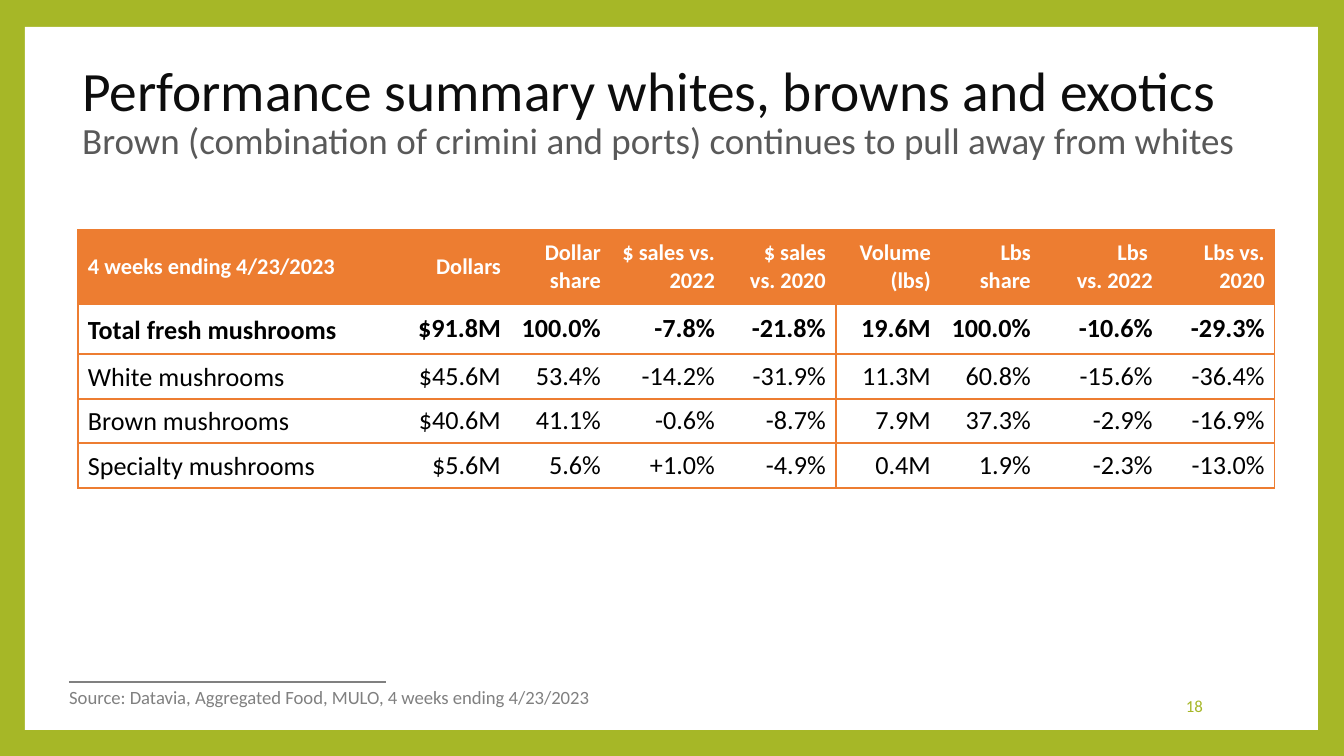
from dataclasses import dataclass

from lxml import etree
from pptx import Presentation
from pptx.dml.color import RGBColor
from pptx.enum.shapes import MSO_CONNECTOR, MSO_SHAPE
from pptx.enum.text import MSO_ANCHOR, PP_ALIGN
from pptx.oxml.ns import qn
from pptx.util import Emu, Pt

EMU_PER_PX = 914400 / 134.4
FONT = "Calibri"
LEFT, RIGHT = PP_ALIGN.LEFT, PP_ALIGN.RIGHT
TOP, MIDDLE = MSO_ANCHOR.TOP, MSO_ANCHOR.MIDDLE
RECTANGLE = MSO_SHAPE.RECTANGLE
STRAIGHT = MSO_CONNECTOR.STRAIGHT

GREEN = RGBColor(0xA6, 0xB7, 0x27)
ORANGE = RGBColor(0xED, 0x7D, 0x31)
WHITE = RGBColor(0xFF, 0xFF, 0xFF)
BLACK = RGBColor(0x00, 0x00, 0x00)
TITLE_COLOR = RGBColor(0x0D, 0x0D, 0x0D)
SUBTITLE_COLOR = RGBColor(0x59, 0x59, 0x59)
GRAY = RGBColor(0x80, 0x80, 0x80)

COLUMN_WIDTHS = (318, 115, 100, 114, 111, 105, 100, 122, 112)
ROW_HEIGHTS = (74, 50, 45, 44, 45)
GROUP_STARTS = (0, 5)
GROUP_ENDS = (4, 8)
CELL_INSET = 10

# "\n" starts a new paragraph, "\v" breaks a line inside one.
TABLE_ROWS = (
    ("4 weeks ending 4/23/2023", "Dollars", "Dollar share", "$ sales vs. 2022",
     "$ sales vs. 2020", "Volume (lbs)", "Lbs\nshare", "Lbs \vvs. 2022", "Lbs vs. 2020"),
    ("Total fresh mushrooms", "$91.8M", "100.0%", "-7.8%", "-21.8%",
     "19.6M", "100.0%", "-10.6%", "-29.3%"),
    ("White mushrooms", "$45.6M", "53.4%", "-14.2%", "-31.9%",
     "11.3M", "60.8%", "-15.6%", "-36.4%"),
    ("Brown mushrooms", "$40.6M", "41.1%", "-0.6%", "-8.7%",
     "7.9M", "37.3%", "-2.9%", "-16.9%"),
    ("Specialty mushrooms", "$5.6M", "5.6%", "+1.0%", "-4.9%",
     "0.4M", "1.9%", "-2.3%", "-13.0%"),
)


@dataclass(frozen=True)
class Style:
    size: float
    color: RGBColor
    bold: bool = False


@dataclass(frozen=True)
class Label:
    left: int
    top: int
    width: int
    height: int
    lines: tuple[tuple[str, Style], ...]
    align: PP_ALIGN = LEFT
    anchor: MSO_ANCHOR = MIDDLE
    line_spacing: float = 1.0
    wrap: bool = True


HEADER_STYLE = Style(12, WHITE, True)
TOTAL_STYLE = Style(14, BLACK, True)
BODY_STYLE = Style(14, BLACK)

LABELS = (
    Label(69, 60, 1259, 106, (
        ("Performance summary whites, browns and exotics", Style(29.7, TITLE_COLOR)),
        ("Brown (combination of crimini and ports) continues to pull away from whites",
         Style(19.8, SUBTITLE_COLOR)),
    ), line_spacing=0.9),
    Label(1028, 686, 188, 40, (("18", Style(9, GREEN)),), align=RIGHT),
    Label(56, 679, 555, 36, (
        ("Source: Datavia, Aggregated Food, MULO, 4 weeks ending 4/23/2023",
         Style(10, GRAY)),
    ), anchor=TOP, wrap=False),
)


def px(length: int) -> Emu:
    return Emu(round(length * EMU_PER_PX))


def add_run(paragraph, text: str, style: Style) -> None:
    run = paragraph.add_run()
    run.text = text
    run.font.name = FONT
    run.font.size = Pt(style.size)
    run.font.bold = style.bold
    run.font.color.rgb = style.color


def add_lines(paragraph, lines) -> None:
    """Add styled lines to one paragraph, with line breaks between them."""
    for index, (text, style) in enumerate(lines):
        if index:
            paragraph.add_line_break()
        add_run(paragraph, text, style)


def add_label(slide, label: Label) -> None:
    box = slide.shapes.add_textbox(
        px(label.left), px(label.top), px(label.width), px(label.height))
    frame = box.text_frame
    frame.word_wrap = label.wrap
    frame.vertical_anchor = label.anchor
    paragraph = frame.paragraphs[0]
    paragraph.alignment = label.align
    paragraph.line_spacing = label.line_spacing
    add_lines(paragraph, label.lines)


def add_panel(slide) -> None:
    panel = slide.shapes.add_shape(RECTANGLE, px(25), px(27), px(1293), px(703))
    panel.shadow.inherit = False
    panel.fill.solid()
    panel.fill.fore_color.rgb = WHITE
    panel.line.fill.background()


def add_source_rule(slide) -> None:
    rule = slide.shapes.add_connector(STRAIGHT, px(69), px(682), px(386), px(682))
    rule.line.color.rgb = GRAY
    rule.line.width = Pt(0.79)
    etree.SubElement(rule._element.spPr, qn("a:effectLst"))


def set_borders(cell, column: int) -> None:
    """Rule every row, and the outer sides of each column group."""
    visible = {"L": column in GROUP_STARTS, "R": column in GROUP_ENDS,
               "T": True, "B": True}
    properties = cell._tc.get_or_add_tcPr()
    for side, shown in visible.items():
        border = etree.SubElement(properties, qn(f"a:ln{side}"), w=str(Pt(1)))
        if shown:
            fill = etree.SubElement(border, qn("a:solidFill"))
            etree.SubElement(fill, qn("a:srgbClr"), val=str(ORANGE))
        else:
            etree.SubElement(border, qn("a:noFill"))


def fill_cell(cell, text: str, row: int, column: int) -> None:
    style = (HEADER_STYLE, TOTAL_STYLE, BODY_STYLE)[min(row, 2)]
    cell.margin_left = cell.margin_right = px(CELL_INSET)
    cell.margin_top = cell.margin_bottom = 0
    cell.vertical_anchor = MIDDLE
    set_borders(cell, column)
    if row == 0:
        cell.fill.solid()
        cell.fill.fore_color.rgb = ORANGE
    else:
        cell.fill.background()
    frame = cell.text_frame
    for index, content in enumerate(text.split("\n")):
        paragraph = frame.add_paragraph() if index else frame.paragraphs[0]
        paragraph.alignment = RIGHT if column else LEFT
        if row and not column:
            paragraph.line_spacing = 1.07
        add_lines(paragraph, [(line, style) for line in content.split("\v")])


def add_performance_table(slide) -> None:
    table = slide.shapes.add_table(
        len(ROW_HEIGHTS), len(COLUMN_WIDTHS), px(78), px(230),
        px(sum(COLUMN_WIDTHS)), px(sum(ROW_HEIGHTS))).table
    table.first_row = False
    table.horz_banding = False
    for column, width in zip(table.columns, COLUMN_WIDTHS):
        column.width = px(width)
    for row, height in zip(table.rows, ROW_HEIGHTS):
        row.height = px(height)
    for row_index, texts in enumerate(TABLE_ROWS):
        for column_index, text in enumerate(texts):
            fill_cell(table.cell(row_index, column_index), text, row_index, column_index)


def main() -> None:
    presentation = Presentation()
    presentation.slide_width = px(1344)
    presentation.slide_height = px(756)
    slide = presentation.slides.add_slide(presentation.slide_layouts[6])
    slide.background.fill.solid()
    slide.background.fill.fore_color.rgb = GREEN
    add_panel(slide)
    add_source_rule(slide)
    for label in LABELS:
        add_label(slide, label)
    add_performance_table(slide)
    presentation.save("out.pptx")


if __name__ == "__main__":
    main()
